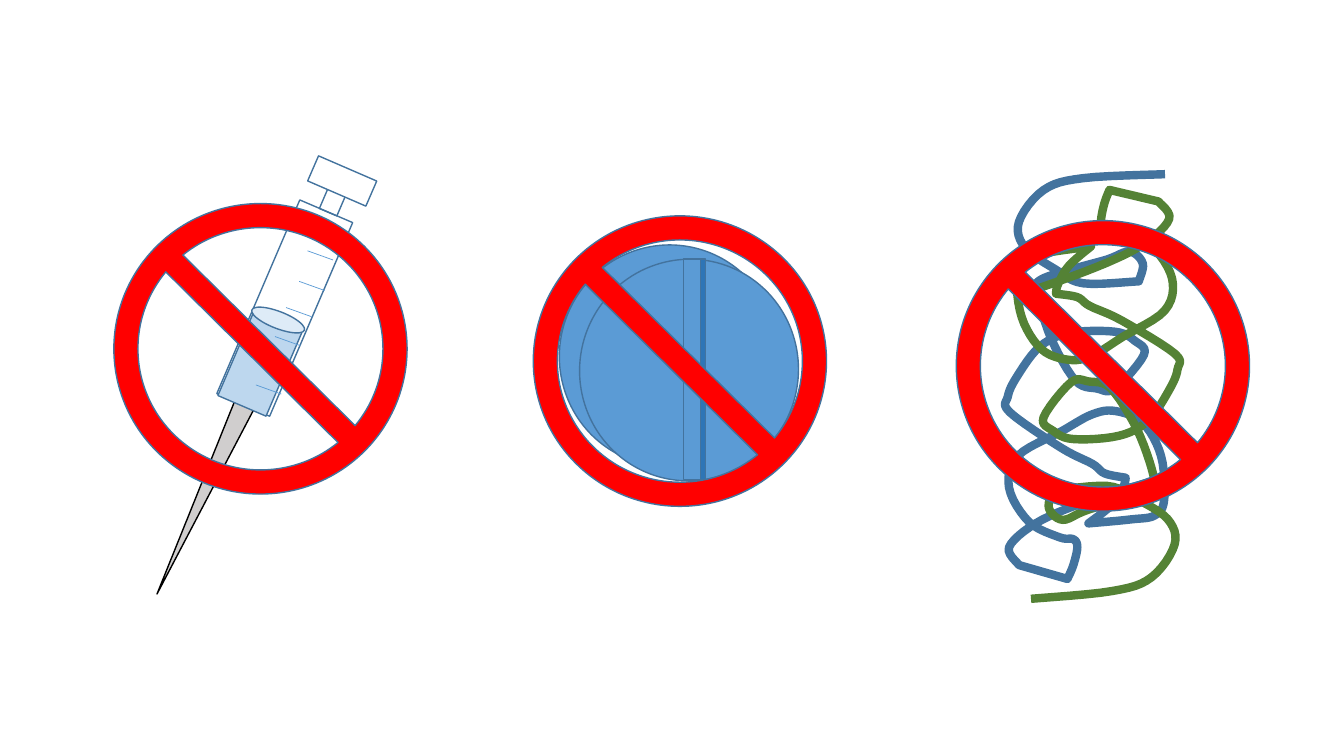
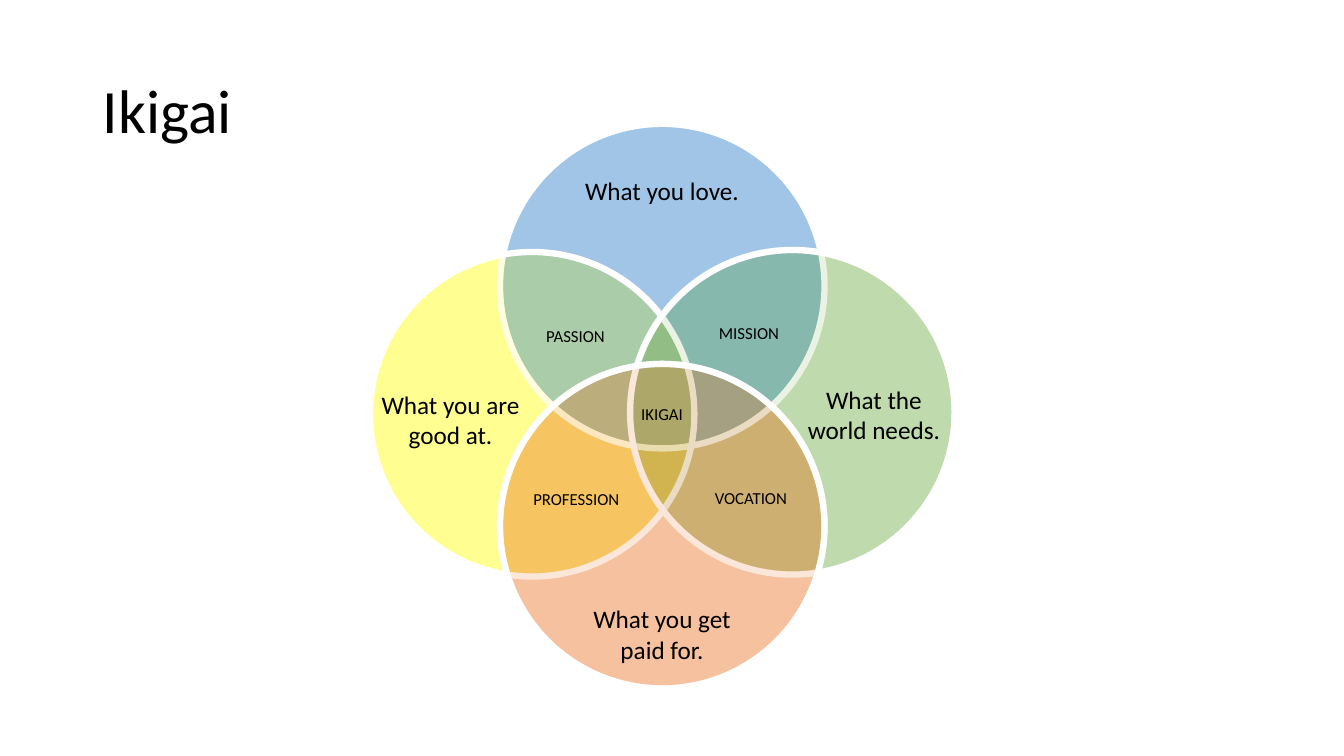
from itertools import chain

from lxml.etree import SubElement
from pptx import Presentation
from pptx.dml.color import RGBColor
from pptx.enum.shapes import MSO_CONNECTOR, MSO_SHAPE
from pptx.enum.text import MSO_ANCHOR, PP_ALIGN
from pptx.oxml.ns import qn
from pptx.util import Cm, Pt

FONT = "Calibri"
COLORS = {
    "outline": "43739E", "blue": "5B9BD5", "groove": "2E75B6",
    "liquid": "BDD7EE", "surface": "DEEBF7", "needle": "D0CECE",
    "red": "FF0000", "yellow": "FFFF00", "green": "70AD47",
    "dark green": "548235", "orange": "ED7D31",
    "white": "FFFFFF", "black": "000000",
}
RECT, OVAL = MSO_SHAPE.RECTANGLE, MSO_SHAPE.OVAL
TRIANGLE = MSO_SHAPE.ISOSCELES_TRIANGLE

# Slide 1, lengths in cm: shape, (left, top, width, height), rotation, fill, line
TILT = 23.2
SYRINGE = {
    "barrel": (RECT, (6.45, 5.11, 1.45, 5.31), TILT, None, "outline"),
    "needle": (TRIANGLE, (4.8, 9.93, 0.53, 5.28), 204.8, "needle", "black"),
    "plunger rod": (RECT, (8.18, 4.62, 0.48, 0.76), TILT, None, "outline"),
    "thumb rest": (RECT, (8.28, 3.76, 0.69, 1.6), 293.4, "white", "outline"),
}
LIQUID = (RECT, (5.89, 8.03, 1.32, 2.29), TILT, "liquid", "outline")
LIQUID_SURFACE = (OVAL, (6.3, 7.85, 1.42, 0.43), 21.1, "surface", "outline")

TICK_RUN, TICK_DROP = 0.64, 0.23
TICKS_ABOVE_LIQUID = [(7.75, 6.32), (7.54, 7.09), (7.21, 7.75)]
TICKS_IN_LIQUID = [(6.93 - 0.24 * i, 8.48 + 0.61 * i) for i in range(3)]

PILL_SIZE = (5.51, 5.59)
PILL = {
    "back face": (OVAL, (14.1, 6.17, *PILL_SIZE), 15.9, "blue", "outline"),
    "front face": (OVAL, (14.61, 6.53, *PILL_SIZE), 15.9, "blue", "outline"),
    "score line": (RECT, (17.22, 6.53, 0.43, 5.56), 0, "blue", "outline"),
    "score shade": (RECT, (17.65, 6.53, 0.13, 5.56), 0, "groove", "outline"),
}

SIGN_SIZE, SIGN_BAND = (7.39, 7.32), 0.083
SIGNS = {"syringe": (2.87, 5.13), "pill": (13.44, 5.44), "strands": (24.1, 5.56)}

# Both strands are one line, the second turned over: left, top, rotation, colour
STRANDS = [(25.4, 4.39, 0, "outline"), (25.81, 4.8, 177.3, "dark green")]
# Millimetres; each section is a smooth curve and sections meet at sharp corners
STRAND_SECTIONS = {
    "top hook": [
        (39.6, 0), (19, 1), (9, 4), (2.8, 12), (4.3, 18.5), (12, 24), (19, 27.5),
        (33, 27),
    ],
    "upper loops": [
        (33, 27), (34, 22.5), (30.7, 19.5), (25, 21.5), (16, 24), (8.1, 26.7),
        (7.4, 30), (10.9, 41.4), (17, 52), (22.4, 54), (27, 54), (34.3, 45.5),
        (32, 42), (27, 39.7), (15.5, 40), (8, 43.5), (2.3, 51), (0, 56), (0.5, 60),
        (13.5, 69), (21.3, 73), (24.4, 75.4), (29.7, 76.5),
    ],
    "inner hook": [(29.7, 76.5), (29, 79), (26, 83.5), (20.3, 88)],
    "lower loop": [
        (20.3, 88), (31, 87), (37, 86), (39.4, 82), (38.6, 71), (34, 62.7),
        (27.2, 59.7), (21.3, 60.5), (13.5, 64.8), (2.5, 71), (0.3, 79), (5.3, 87.6),
        (13, 91.5), (16.5, 92), (17.5, 94), (16.5, 98.5), (15, 102),
    ],
    "bottom edge": [(15, 102), (2.8, 98.5)],
    "tail": [(2.8, 98.5), (0.3, 94), (7, 88), (19, 82.8), (38.6, 76.7)],
}
CURVE_STEPS = 6

# Slide 2, lengths in cm
TITLE, TITLE_BOX = "Ikigai", (2.34, 1.02, 29.21, 3.68)
CIRCLE_SIZE = 8.18
CIRCLES = {  # side: (left, top, colour)
    "left": (9.32, 6.35, "yellow"),
    "top": (12.6, 3.12, "blue"),
    "right": (15.88, 6.3, "green"),
    "bottom": (12.6, 9.17, "orange"),
}
# Two coats of colour, each from back to front, with opacity in percent
COATS = [
    {"left": 35, "top": 35, "right": 35, "bottom": 35},
    {"top": 35, "left": 12, "right": 15, "bottom": 18},
]
LABEL_WIDTH = 4.47
LABELS = {  # text size: (text, left, top, height)
    18: [
        ("What you love.", 14.45, 4.29, 1.02),
        ("What you get paid for.", 14.45, 15.09, 1.8),
        ("What the world needs.", 19.79, 9.55, 1.8),
        ("What you are good at.", 9.12, 9.68, 1.8),
    ],
    12: [
        ("VOCATION", 16.69, 12.17, 0.76),
        ("PROFESSION", 12.29, 12.19, 0.76),
        ("PASSION", 12.27, 8.08, 0.76),
        ("MISSION", 16.64, 8, 0.76),
        ("IKIGAI", 14.45, 10.06, 0.76),
    ],
}


def rgb(name):
    return RGBColor.from_string(COLORS[name])


def style(sp, fill, line, width=1, rotation=0):
    sp.shadow.inherit = False
    sp.rotation = rotation
    if fill:
        sp.fill.solid()
        sp.fill.fore_color.rgb = rgb(fill)
    else:
        sp.fill.background()
    sp.line.color.rgb = rgb(line)
    sp.line.width = Pt(width)


def add_part(slide, kind, box, rotation, fill, line, width=1):
    sp = slide.shapes.add_shape(kind, *map(Cm, box))
    style(sp, fill, line, width, rotation)
    return sp


def add_ticks(slide, starts):
    for x, y in starts:
        ends = map(Cm, (x, y, x + TICK_RUN, y + TICK_DROP))
        tick = slide.shapes.add_connector(MSO_CONNECTOR.STRAIGHT, *ends)
        tick.line.color.rgb = rgb("blue")
        tick.line.width = Pt(0.5)
        SubElement(tick._element.spPr, qn("a:effectLst"))


def add_syringe(slide):
    for part in SYRINGE.values():
        add_part(slide, *part)
    add_ticks(slide, TICKS_ABOVE_LIQUID)
    add_part(slide, *LIQUID)
    add_ticks(slide, TICKS_IN_LIQUID)
    add_part(slide, *LIQUID_SURFACE)


def spline(a, b, c, d, t):
    """Return the Catmull-Rom value at t, from b (t = 0) to c (t = 1)."""
    return b + t / 2 * (
        c - a + t * (2 * a - 5 * b + 4 * c - d + t * (3 * (b - c) + d - a))
    )


def smooth(points):
    """Return points along a curve that passes through the given ones."""
    padded = [points[0], *points, points[-1]]
    curve = [points[0]]
    for knots in zip(padded, padded[1:], padded[2:], padded[3:]):
        xs, ys = zip(*knots)
        for step in range(1, CURVE_STEPS + 1):
            t = step / CURVE_STEPS
            curve.append((spline(*xs, t), spline(*ys, t)))
    return curve


def add_strand(slide, left, top, rotation, color):
    curve = chain.from_iterable(map(smooth, STRAND_SECTIONS.values()))
    start, *rest = [(Cm(x / 10), Cm(y / 10)) for x, y in curve]
    builder = slide.shapes.build_freeform(*start)
    builder.add_line_segments(rest, close=False)
    sp = builder.convert_to_shape(Cm(left), Cm(top))
    style(sp, None, color, 6, rotation)


def add_sign(slide, left, top):
    box = (left, top, *SIGN_SIZE)
    sp = add_part(slide, MSO_SHAPE.NO_SYMBOL, box, 0, "red", "outline")
    sp.adjustments[0] = SIGN_BAND


def add_circle(slide, left, top, color, opacity):
    box = (left, top, CIRCLE_SIZE, CIRCLE_SIZE)
    sp = add_part(slide, OVAL, box, 0, color, "white", 4.5)
    clr = sp._element.spPr.find(qn("a:solidFill")).find(qn("a:srgbClr"))
    SubElement(clr, qn("a:alpha"), val=str(opacity * 1000))


def write(tf, text, size, align):
    tf.word_wrap = True
    p = tf.paragraphs[0]
    p.alignment = align
    r = p.add_run()
    r.text = text
    for name, value in {"name": FONT, "size": Pt(size)}.items():
        setattr(r.font, name, value)
    r.font.color.rgb = rgb("black")
    return p


def build_signs(prs):
    slide = prs.slides.add_slide(prs.slide_layouts[6])
    add_syringe(slide)
    for part in PILL.values():
        add_part(slide, *part)
    for strand in STRANDS:
        add_strand(slide, *strand)
    for corner in SIGNS.values():
        add_sign(slide, *corner)


def build_ikigai(prs):
    slide = prs.slides.add_slide(prs.slide_layouts[5])
    title = slide.shapes.title
    for name, value in zip(("left", "top", "width", "height"), TITLE_BOX):
        setattr(title, name, Cm(value))
    title.text_frame.vertical_anchor = MSO_ANCHOR.MIDDLE
    write(title.text_frame, TITLE, 44, PP_ALIGN.LEFT).line_spacing = 0.9
    for coat in COATS:
        for side, opacity in coat.items():
            add_circle(slide, *CIRCLES[side], opacity)
    for size, labels in LABELS.items():
        for text, left, top, height in labels:
            box = map(Cm, (left, top, LABEL_WIDTH, height))
            write(slide.shapes.add_textbox(*box).text_frame, text, size, PP_ALIGN.CENTER)


def main():
    prs = Presentation()
    prs.slide_width, prs.slide_height = Cm(33.87), Cm(19.05)
    build_signs(prs)
    build_ikigai(prs)
    prs.save("out.pptx")


if __name__ == "__main__":
    main()
